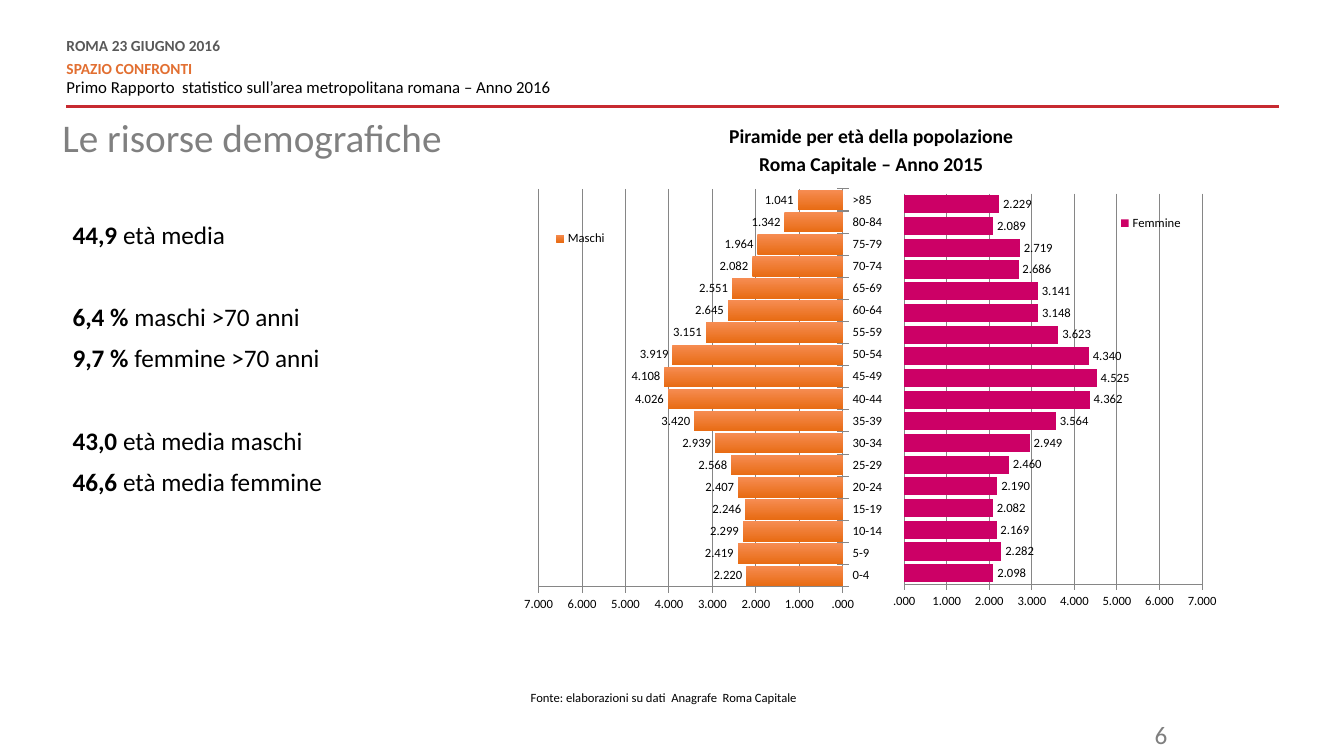
from lxml import etree
from pptx import Presentation
from pptx import util as u
from pptx.chart import data as cd
from pptx.dml.color import RGBColor
from pptx.enum import chart as ch, shapes as sh, text as tx
from pptx.oxml import ns

Pt = u.Pt
rgb = RGBColor.from_string


def style(font, size, color, bold=False):
    font.name, font.size, font.bold = "Calibri", Pt(size), bold
    font.color.rgb = rgb(color)


def place(part, spot, box, inner=False):
    """Give a chart part a manual layout, as shares of the chart's size."""
    for old in part.findall(ns.qn("c:layout")):
        part.remove(old)
    lay = etree.Element(ns.qn("c:layout"))
    man = etree.SubElement(lay, ns.qn("c:manualLayout"))
    pairs = [("layoutTarget", "inner")] if inner else []
    pairs += [("xMode", "edge"), ("yMode", "edge")] + list(zip("xywh", box))
    for tag, val in pairs:
        etree.SubElement(man, ns.qn("c:" + tag)).set("val", str(val))
    part.insert(spot, lay)


prs = Presentation()
prs.slide_width, prs.slide_height = Pt(960), Pt(540)
slide = prs.slides.add_slide(prs.slide_layouts[1])

# Header rule
rule = slide.shapes.add_connector(
    sh.MSO_CONNECTOR.STRAIGHT, Pt(47.5), Pt(76.3), Pt(913.7), Pt(76.3))
rule.line.color.rgb = rgb("C72A31")
rule.line.width = Pt(2)
etree.SubElement(rule._element.spPr, ns.qn("a:effectLst"))

# Text boxes: place, margins, then lines as
# (text, size, colour, bold, alignment, line spacing, space before, space after)
LEFT, MID, RIGHT = tx.PP_ALIGN.LEFT, tx.PP_ALIGN.CENTER, tx.PP_ALIGN.RIGHT
boxes = [
    ((47.5, 28.1, 374.4, 42.5), (0, 0), [
        ("ROMA 23 GIUGNO 2016", 11, "595959", True, LEFT, Pt(10.8), 0, 6),
        ("SPAZIO CONFRONTI", 11, "E26F31", True, LEFT, Pt(10.8), 0, 0),
        ("Primo Rapporto  statistico sull’area metropolitana romana – Anno 2016",
         12, "000000", False, LEFT, Pt(10.8), 3, 6)]),
    ((370, 85, 504.7, 48), (7.2, 3.6), [
        ("Piramide per età della popolazione", 14, "000000", True, MID, 1, 0, 0),
        ("Roma Capitale – Anno 2015", 14, "000000", True, MID, 1, 3, 0)]),
    ((372, 489.5, 300, 18), (7.2, 3.6), [
        ("Fonte: elaborazioni su dati  Anagrafe  Roma Capitale",
         9, "000000", False, LEFT, 1, 0, 0)]),
    ((784, 510.5, 57, 25), (7.2, 3.6), [
        ("6", 18, "7F7F7F", False, RIGHT, 1, 0, 0)]),
]
for rect, (side, edge), lines in boxes:
    frame = slide.shapes.add_textbox(*map(Pt, rect)).text_frame
    frame.word_wrap = True
    frame.margin_left = frame.margin_right = Pt(side)
    frame.margin_top = frame.margin_bottom = Pt(edge)
    for i, (words, size, color, bold, align, line, pre, post) in enumerate(lines):
        para = frame.add_paragraph() if i else frame.paragraphs[0]
        para.text = words
        para.alignment, para.line_spacing = align, line
        para.space_before, para.space_after = Pt(pre), Pt(post)
        style(para.font, size, color, bold)

# Title and key figures
title, body = slide.placeholders
for holder, rect, pad in ((title, (44.6, 85, 282.2, 81.4), (0, 0)),
                          (body, (44.6, 155.3, 229, 273.8), (7.2, 3.6))):
    holder.left, holder.top, holder.width, holder.height = map(Pt, rect)
    frame = holder.text_frame
    frame.word_wrap = True
    frame.auto_size = tx.MSO_AUTO_SIZE.NONE
    frame.vertical_anchor = tx.MSO_ANCHOR.TOP
    frame.margin_left = frame.margin_right = Pt(pad[0])
    frame.margin_top = frame.margin_bottom = Pt(pad[1])

title.text_frame.text = "Le risorse demografiche"
head = title.text_frame.paragraphs[0]
head.alignment, head.line_spacing = LEFT, 0.9
style(head.font, 28, "808080")

facts = [("44,9 ", "età media", 0),
         ("6,4 % ", "maschi >70 anni", 39.5),
         ("9,7 % ", "femmine >70 anni", 10),
         ("43,0 ", "età media maschi", 39.5),
         ("46,6 ", "età media femmine", 10)]
for i, (value, label, gap) in enumerate(facts):
    para = body.text_frame.add_paragraph() if i else body.text_frame.paragraphs[0]
    props = para._p.get_or_add_pPr()
    props.set("marL", "0")
    props.set("indent", "0")
    etree.SubElement(props, ns.qn("a:buNone"))
    para.line_spacing, para.space_before = 0.9, Pt(gap)
    style(para.font, 18, "000000")
    for words, bold in ((value, True), (label, False)):
        run = para.add_run()
        run.text, run.font.bold = words, bold

# Population pyramid: men to the left, women to the right
ages = [f"{a}-{a + 4}" for a in range(0, 85, 5)] + [">85"]
men = [2.220, 2.419, 2.299, 2.246, 2.407, 2.568, 2.939, 3.420, 4.026,
       4.108, 3.919, 3.151, 2.645, 2.551, 2.082, 1.964, 1.342, 1.041]
women = [2.098, 2.282, 2.169, 2.082, 2.190, 2.460, 2.949, 3.564, 4.362,
         4.525, 4.340, 3.623, 3.148, 3.141, 2.686, 2.719, 2.089, 2.229]
ranks = [str(n) for n in range(1, 19)]
POS = ch.XL_LEGEND_POSITION
FMT = "#.#00"
sides = [
    ("Maschi", ages, men, 370, 262.8, 10, POS.LEFT,
     (0.056, 0.001, 0.827, 0.918), (0.08, 0.09, 0.18, 0.05)),
    ("Femmine", ranks, women, 634.3, 236.2, 20, POS.RIGHT,
     (0.049, 0.012, 0.901, 0.901), (0.68, 0.055, 0.23, 0.05)),
]
for name, cats, vals, left, width, gap, pos, area, key in sides:
    male = name == "Maschi"
    data = cd.CategoryChartData(number_format=FMT)
    data.categories = cats
    data.add_series(name, vals)
    chart = slide.shapes.add_chart(
        ch.XL_CHART_TYPE.BAR_CLUSTERED, Pt(left), Pt(134.6), Pt(width),
        Pt(309.6), data).chart
    chart.has_title = False
    style(chart.font, 9, "000000")

    chart.has_legend = True
    chart.legend.position = pos
    chart.legend.include_in_layout = male
    place(chart.legend._element, 1, key)
    place(chart._chartSpace.chart.plotArea, 0, area, True)

    plot = chart.plots[0]
    plot.gap_width, plot.vary_by_categories = gap, False
    fill = plot.series[0].format.fill
    if male:
        fill.gradient()
        fill.gradient_angle = 270
        for stop, color in zip(fill.gradient_stops, ("F68C52", "E86C14")):
            stop.color.rgb = rgb(color)
    else:
        fill.solid()
        fill.fore_color.rgb = rgb("CC0066")

    plot.has_data_labels = True
    tags = plot.data_labels
    tags.show_value = True
    tags.number_format, tags.number_format_is_linked = FMT, False
    tags.position = ch.XL_LABEL_POSITION.OUTSIDE_END
    style(tags.font, 9, "000000")

    scale, groups = chart.value_axis, chart.category_axis
    scale.minimum_scale, scale.maximum_scale, scale.major_unit = 0, 7, 1
    scale.reverse_order = male
    scale.has_major_gridlines = True
    scale.major_gridlines.format.line.color.rgb = rgb("868686")
    scale.tick_labels.number_format = FMT
    scale.tick_labels.number_format_is_linked = False
    groups.visible = male
    for axis in (scale, groups):
        axis.major_tick_mark = ch.XL_TICK_MARK.CROSS
        axis.format.line.color.rgb = rgb("868686")

prs.save("out.pptx")
